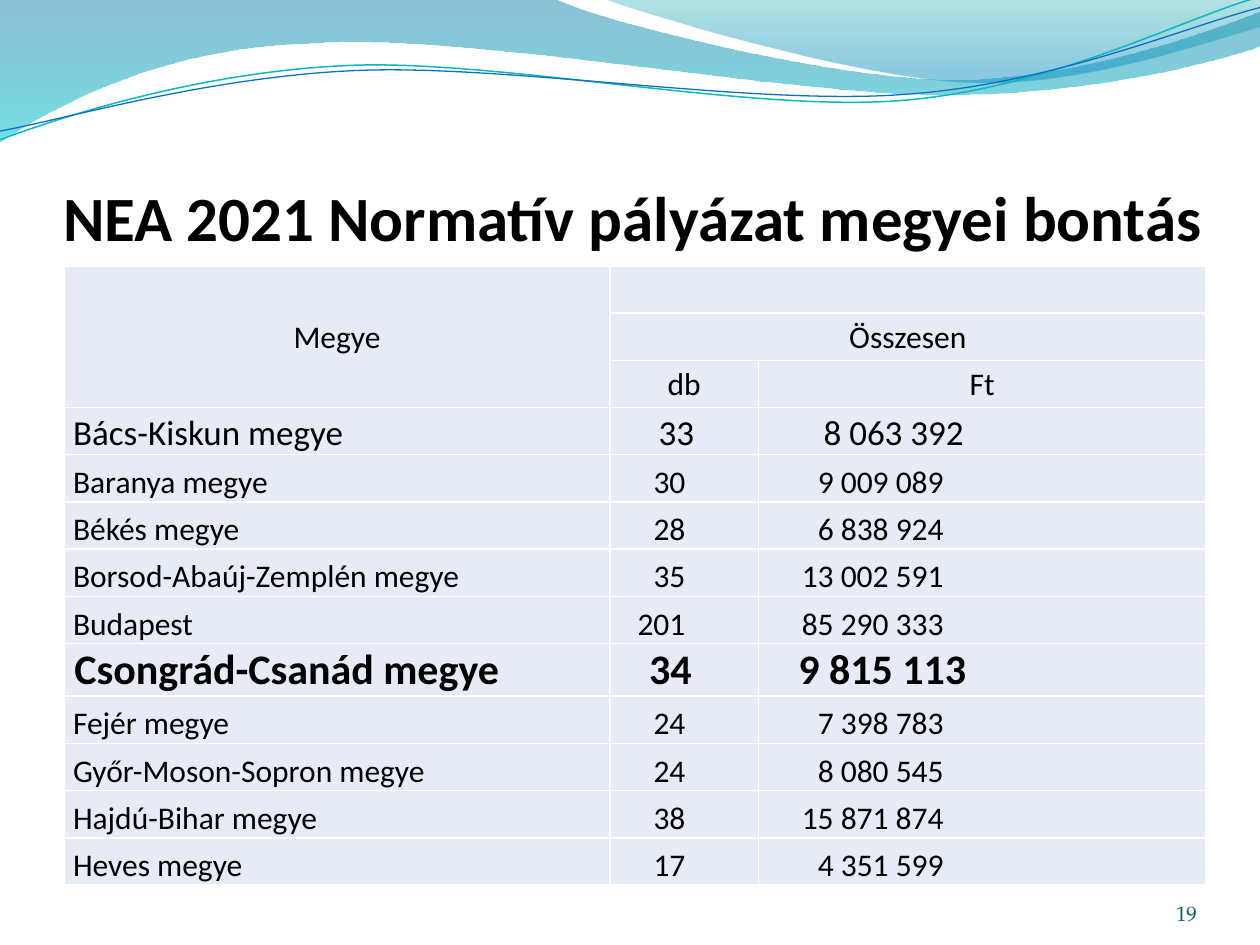
from lxml import etree
from pptx import Presentation
from pptx import util as u
from pptx.dml.color import RGBColor
from pptx.enum import text
from pptx.oxml.ns import qn

SANS = "Calibri"
ALIGN = {"l": text.PP_ALIGN.LEFT, "c": text.PP_ALIGN.CENTER, "r": text.PP_ALIGN.RIGHT}
ROWS = [
    ("Bács-Kiskun megye", "33", "8 063 392"),
    ("Baranya megye", "30", "9 009 089"),
    ("Békés megye", "28", "6 838 924"),
    ("Borsod-Abaúj-Zemplén megye", "35", "13 002 591"),
    ("Budapest", "201", "85 290 333"),
    ("Csongrád-Csanád megye", "34", "9 815 113"),
    ("Fejér megye", "24", "7 398 783"),
    ("Győr-Moson-Sopron megye", "24", "8 080 545"),
    ("Hajdú-Bihar megye", "38", "15 871 874"),
    ("Heves megye", "17", "4 351 599"),
]
# Per text size: left margin of the names, right margins of the number columns
PADS = {18: (0.07, 0.58, 2.08), 20: (0.07, 0.51, 1.92), 24: (0.08, 0.53, 1.9)}


def rgb(code):
    return RGBColor.from_string(code)


def write(frame, words, size=18, font=SANS, color="000000", bold=False, align="l"):
    para = frame.paragraphs[0]
    para.alignment = ALIGN[align]
    run = para.add_run()
    run.text = words
    run.font.size = u.Pt(size)
    run.font.name = font
    run.font.bold = bold
    run.font.color.rgb = rgb(color)


def inset(item, left, top, right, bottom):
    item.margin_left, item.margin_top = u.Inches(left), u.Inches(top)
    item.margin_right, item.margin_bottom = u.Inches(right), u.Inches(bottom)


def outline(slide, start, parts, close):
    """Two numbers make a straight part, six make a cubic curve."""
    pts = [[u.Inches(n) for n in part[i:i + 2]]
           for part in parts for i in range(0, len(part), 2)]
    build = slide.shapes.build_freeform(u.Inches(start[0]), u.Inches(start[1]))
    build.add_line_segments(pts, close=close)
    shape = build.convert_to_shape()
    shape.shadow.inherit = False
    # Join each three segments of a curve into one
    segs = iter(list(shape._element.iter(qn("a:lnTo"))))
    for part in parts:
        group = [next(segs) for _ in range(len(part) // 2)]
        if len(group) == 3:
            curve = etree.Element(qn("a:cubicBezTo"))
            group[0].addprevious(curve)
            for seg in group:
                curve.append(seg[0])
                seg.getparent().remove(seg)
    return shape


def band(slide, start, parts, stops):
    shape = outline(slide, start, parts, True)
    shape.line.fill.background()
    shape.fill.gradient()
    shape.fill.gradient_angle = 270
    for stop, (pos, color, _) in zip(shape.fill.gradient_stops, stops):
        stop.position = pos
        stop.color.rgb = rgb(color)
    nodes = shape._element.spPr.iter(qn("a:srgbClr"))
    for node, (_, _, alpha) in zip(nodes, stops):
        etree.SubElement(node, qn("a:alpha")).set("val", str(alpha * 1000))


def wave(slide, start, parts, color, width):
    shape = outline(slide, start, parts, False)
    shape.fill.background()
    shape.line.color.rgb = rgb(color)
    shape.line.width = u.Pt(width)


def border(cell, color="FFFFFF", width=1):
    props = cell._tc.get_or_add_tcPr()
    for i, side in enumerate(("lnL", "lnR", "lnT", "lnB")):
        line = etree.Element(qn("a:" + side), w=str(u.Pt(width)))
        fill = etree.SubElement(line, qn("a:solidFill"))
        etree.SubElement(fill, qn("a:srgbClr")).set("val", color)
        props.insert(i, line)


def header(slide):
    band(slide, (0, 0), [
        (4.4, -0.01), (4.76, 0.17, 6.64, 0.63, 7.58, 0.63),
        (8.53, 0.63, 9.58, 0.26, 10, 0.09), (10.01, 0.36),
        (9.83, 0.44, 8.7, 0.76, 7.46, 0.75), (6.22, 0.75, 3.82, 0.28, 2.57, 0.34),
        (1.29, 0.36, 0.46, 0.83, -0.01, 1.13), (0, 0),
    ], [(0, "0074A1", 45), (1, "00C6CF", 55)])
    band(slide, (4.79, -0.01), [
        (5.09, 0.11, 6.82, 0.62, 7.69, 0.65), (8.56, 0.69, 9.61, 0.32, 10, 0.21),
        (10, 0), (4.79, -0.01),
    ], [(0, "00A1A9", 30), (0.8, "008BBF", 45)])
    wave(slide, (0, 1.11), [
        (0.48, 0.93, 1.58, 0.57, 2.77, 0.52), (3.95, 0.47, 5.93, 0.89, 7.13, 0.8),
        (8.33, 0.71, 9.38, 0.15, 9.98, -0.02),
    ], "0AB8BF", 0.85)
    wave(slide, (0, 1.04), [
        (0.47, 0.96, 1.64, 0.61, 2.83, 0.56), (4.03, 0.51, 5.97, 0.84, 7.17, 0.75),
        (8.36, 0.67, 9.41, 0.21, 10, 0.06),
    ], "0F6FC6", 0.75)


def heading(slide):
    title = slide.shapes.title
    slide.shapes._spTree.append(title._element)  # in front of the waves
    title.left, title.top = u.Inches(0.5), u.Inches(0.77)
    title.width, title.height = u.Inches(9.22), u.Inches(1.25)
    frame = title.text_frame
    frame.vertical_anchor = text.MSO_ANCHOR.BOTTOM
    inset(frame, 0, 0.05, 0, 0)
    write(frame, "NEA 2021 Normatív pályázat megyei bontás", size=36, bold=True)


def counties(slide):
    count = len(ROWS) + 3
    table = slide.shapes.add_table(count, 3, u.Inches(0.51), u.Inches(2.11),
                                   u.Inches(9.06), u.Inches(4.9)).table
    table.first_row = table.horz_banding = False
    for col, width in zip(table.columns, (4.33, 1.18, 3.55)):
        col.width = u.Inches(width)
    for row in table.rows:
        row.height = u.Inches(0.375)
    for cell in table.iter_cells():
        cell.fill.solid()
        cell.fill.fore_color.rgb = rgb("E7EBF5")
        border(cell)
        inset(cell, 0.01, 0.01, 0.01, 0)

    # Column heads
    table.cell(0, 0).merge(table.cell(2, 0))
    for i in (0, 1):
        table.cell(i, 1).merge(table.cell(i, 2))
    for i, j, words in ((0, 0, "Megye"), (1, 1, "Összesen"), (2, 1, "db"), (2, 2, "Ft")):
        cell = table.cell(i, j)
        cell.vertical_anchor = text.MSO_ANCHOR.MIDDLE
        write(cell.text_frame, words, align="c")

    # County rows, two of them larger
    sizes = {"Bács-Kiskun megye": 20, "Csongrád-Csanád megye": 24}
    for i, row in enumerate(ROWS, 3):
        size = sizes.get(row[0], 18)
        if size == 24:
            table.rows[i].height = u.Inches(0.41)
        for j, (words, pad) in enumerate(zip(row, PADS[size])):
            cell = table.cell(i, j)
            cell.vertical_anchor = text.MSO_ANCHOR.BOTTOM
            if j:
                cell.margin_right = u.Inches(pad)
            else:
                cell.margin_left = u.Inches(pad)
            write(cell.text_frame, words, size=size, bold=size == 24,
                  align="r" if j else "l")


def number(slide):
    box = slide.shapes.add_textbox(u.Inches(8.67), u.Inches(6.95),
                                   u.Inches(0.83), u.Inches(0.4))
    frame = box.text_frame
    frame.word_wrap = True
    frame.vertical_anchor = text.MSO_ANCHOR.BOTTOM
    inset(frame, 0, 0, 0, 0)
    write(frame, "19", size=12, font="TeX Gyre Pagella", color="045D75", align="r")


def main():
    deck = Presentation()
    deck.slide_width, deck.slide_height = u.Inches(10), u.Inches(7.5)
    slide = deck.slides.add_slide(deck.slide_layouts[5])
    header(slide)
    heading(slide)
    counties(slide)
    number(slide)
    deck.save("out.pptx")


if __name__ == "__main__":
    main()
